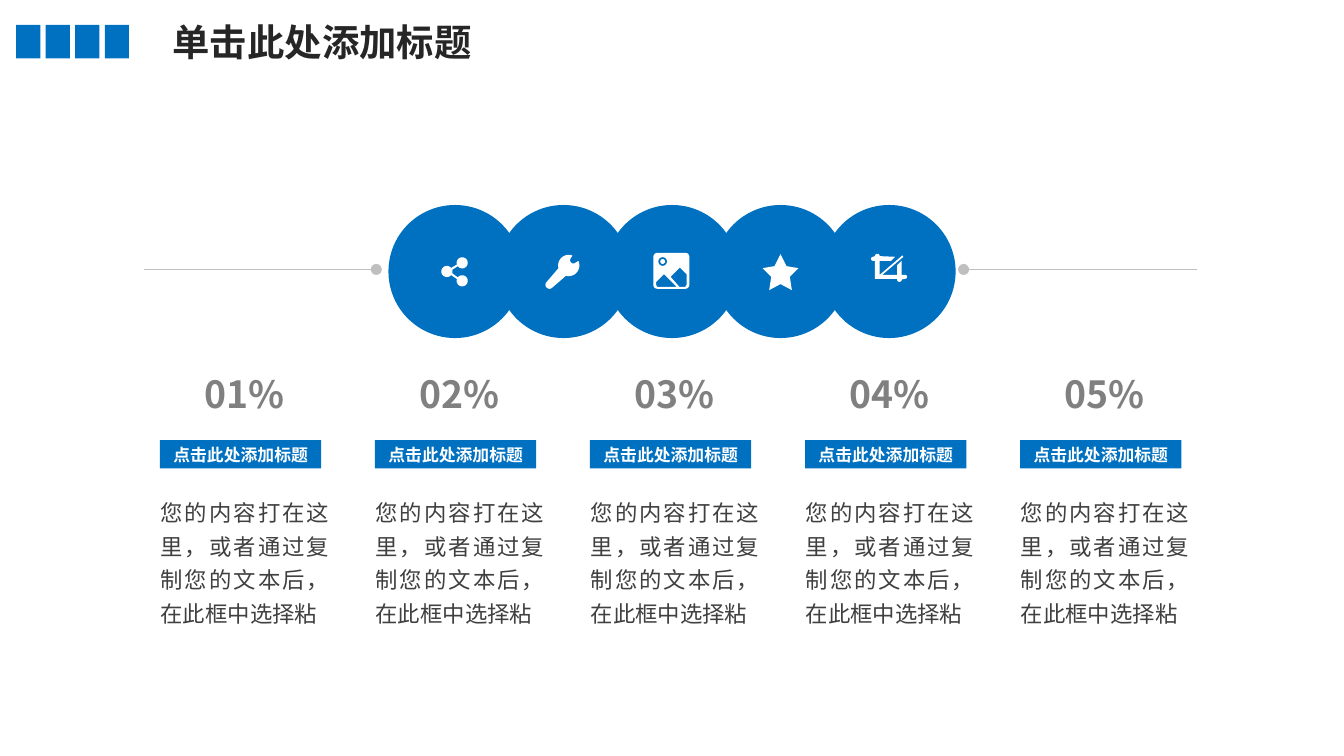
from collections import namedtuple
from math import cos, radians, sin

from lxml.etree import SubElement
from pptx import Presentation
from pptx.dml.color import RGBColor
from pptx.enum.shapes import MSO_CONNECTOR as Connector, MSO_SHAPE as Preset
from pptx.enum.text import MSO_ANCHOR as Anchor, MSO_AUTO_SIZE as AutoSize, PP_ALIGN as Align
from pptx.oxml.ns import qn
from pptx.util import Inches, Pt

COLORS = {
    "blue": "0070C0",
    "white": "FFFFFF",
    "title": "262626",
    "body": "404040",
    "number": "808080",
    "line": "BFBFBF",
}
FONT = "Noto Sans CJK SC"
COLUMNS, ROWS = 100, 56.25
CELL = Inches(0.1)
FINENESS = 100
HEADING = "点击此处添加标题"
BODY = "您的内容打在这里，或者通过复制您的文本后，在此框中选择粘"

Box = namedtuple("Box", "left top width height")


def cells(*lengths):
    return [round(length * CELL) for length in lengths]


def inside(box, left, top, width, height):
    return Box(box.left + left, box.top + top, width, height)


def color(name):
    return RGBColor.from_string(COLORS[name])


def paint(shape, fill):
    shape.shadow.inherit = False
    shape.fill.solid()
    shape.fill.fore_color.rgb = color(fill)
    shape.line.fill.background()
    return shape


def add_preset(page, preset, box, fill="blue"):
    return paint(page.shapes.add_shape(preset, *cells(*box)), fill)


def write(shape, text, size, tone, bold=False, align=Align.CENTER, wrap=True, margins=(0.6, 0.3)):
    frame = shape.text_frame
    frame.text = text
    frame.word_wrap = wrap
    frame.auto_size = AutoSize.SHAPE_TO_FIT_TEXT
    frame.margin_left = frame.margin_right = cells(margins[0])[0]
    frame.margin_top = frame.margin_bottom = cells(margins[1])[0]
    para = frame.paragraphs[0]
    para.alignment = align
    span = para.runs[0]
    span.font.size = Pt(size)
    span.font.bold = bold
    span.font.name = FONT
    span.font.color.rgb = color(tone)
    SubElement(span.font._element, qn("a:ea"), typeface=FONT)
    return para


def add_text(page, box, *args, **options):
    return write(page.shapes.add_textbox(*cells(*box)), *args, **options)


def arc(x, y, radius, start, end, steps=16):
    angles = [radians(start + (end - start) * step / steps) for step in range(steps + 1)]
    return [(x + radius * cos(angle), y + radius * sin(angle)) for angle in angles]


def share_icon():
    hub, upper, lower = (44, 50, 4.2), (55.5, 43.5, 4.2), (55.5, 57, 4.2)
    return [arc(*hub, 40, 320) + arc(*upper, 162, 502)
            + arc(*hub, -18, 18) + arc(*lower, 218, 558)]


def wrench_icon():
    head = (54, 45.5, 8)
    return [arc(*head, 290, 165) + arc(39.5, 60, 3, 225, 45)
            + arc(*head, 105, -25) + arc(57.5, 41.5, 2.5, 45, 225)]


def picture_icon():
    frame = (arc(39, 39, 3, 180, 270) + arc(60, 39, 3, 270, 360)
             + arc(60, 60, 3, 0, 90) + arc(39, 60, 3, 90, 180))
    hill = [(39, 61.5), (38, 60), (38, 58), (44, 52), (53.5, 61.5)]
    peak = [(61, 60), (60, 61.5), (55.5, 61.5), (49, 54), (56, 47), (61, 52)]
    return [frame, arc(43, 42.5, 3.3, 0, 360), arc(43, 42.5, 1.8, 0, 360), hill, peak]


def star_icon():
    return [[(63.5, 47.5), (54.5, 46), (50, 37), (45.5, 46), (36.5, 47.5),
             (43, 54), (41.5, 64), (50, 59.5), (58.5, 64), (57, 54)]]


def crop_icon():
    outer = (arc(41.2, 38.5, 1.8, 180, 360) + [(54.5, 39), (51.5, 42), (43, 42), (43, 52.5)]
             + [(60, 38), (60.8, 39), (45, 52.5), (56, 52.5), (56, 45.5), (59.5, 42), (59.5, 52.5)]
             + arc(62, 54, 1.5, -90, 90) + arc(57.8, 56, 1.8, 0, 180)
             + [(56, 55.5), (39.4, 55.5), (39.4, 42)] + arc(38, 40.5, 1.5, 90, 270))
    return [outer]


def add_icon(page, box, outlines):
    fine = [[(x * FINENESS, y * FINENESS) for x, y in outline] for outline in outlines]
    scale = box.width * CELL / (100 * FINENESS)
    builder = page.shapes.build_freeform(*fine[0][0], scale=scale)
    for index, outline in enumerate(fine):
        if index:
            builder.move_to(*outline[0])
        builder.add_line_segments(outline[1:], close=True)
    paint(builder.convert_to_shape(*cells(box.left, box.top)), "white")


def add_header(page, box):
    for index in range(4):
        add_preset(page, Preset.RECTANGLE, inside(box, index * 2.2, 0.95, 1.8, 2.5))
    add_text(page, inside(box, 10.65, 0, 24.5, 4.4), "单击此处添加标题", 20, "title",
             bold=True, align=Align.LEFT, wrap=False, margins=(1, 0.5))


def add_rule(page, start, end, level):
    rule = page.shapes.add_connector(Connector.STRAIGHT, *cells(start, level, end, level))
    rule.line.color.rgb = color("line")
    rule.line.width = Pt(0.5)
    SubElement(rule.line._get_or_add_ln(), qn("a:tailEnd"), type="oval")
    SubElement(rule._element.spPr, qn("a:effectLst"))


def add_circle_chain(page, box):
    icons = [share_icon(), wrench_icon(), picture_icon(), star_icon(), crop_icon()]
    size = box.height
    pitch = (box.width - size) / (len(icons) - 1)
    level = box.top + 4.8
    add_rule(page, box.left - 18.2, box.left - 0.9, level)
    add_rule(page, box.left + box.width + 18, box.left + box.width + 0.6, level)
    for index, outlines in reversed(list(enumerate(icons))):
        circle = inside(box, index * pitch, 0, size, size)
        add_preset(page, Preset.OVAL, circle)
        add_icon(page, circle, outlines)


def add_item(page, box, number):
    label = add_preset(page, Preset.RECTANGLE, inside(box, 0.55, 5.4, 12, 2.1))
    label.text_frame.vertical_anchor = Anchor.MIDDLE
    write(label, HEADING, 9, "white", bold=True)
    para = add_text(page, inside(box, 0, 9, box.width, 10.7), BODY, 12, "body",
                    align=Align.JUSTIFY)
    para.line_spacing = 1.25
    para.space_after = Pt(3)
    add_text(page, inside(box, 3.25, 0, 7.2, 3.9), f"{number:02}%", 20, "number",
             bold=True, wrap=False)


def main():
    deck = Presentation()
    deck.slide_width, deck.slide_height = cells(COLUMNS, ROWS)
    page = deck.slides.add_slide(deck.slide_layouts[6])
    add_header(page, Box(1.2, 0.9, 35.1, 4.4))
    add_circle_chain(page, Box(28.9, 15.25, 42.2, 9.9))
    for index in range(5):
        add_item(page, Box(11.35 + index * 16, 27.35, 13.75, 19.7), index + 1)
    deck.save("out.pptx")


if __name__ == "__main__":
    main()
